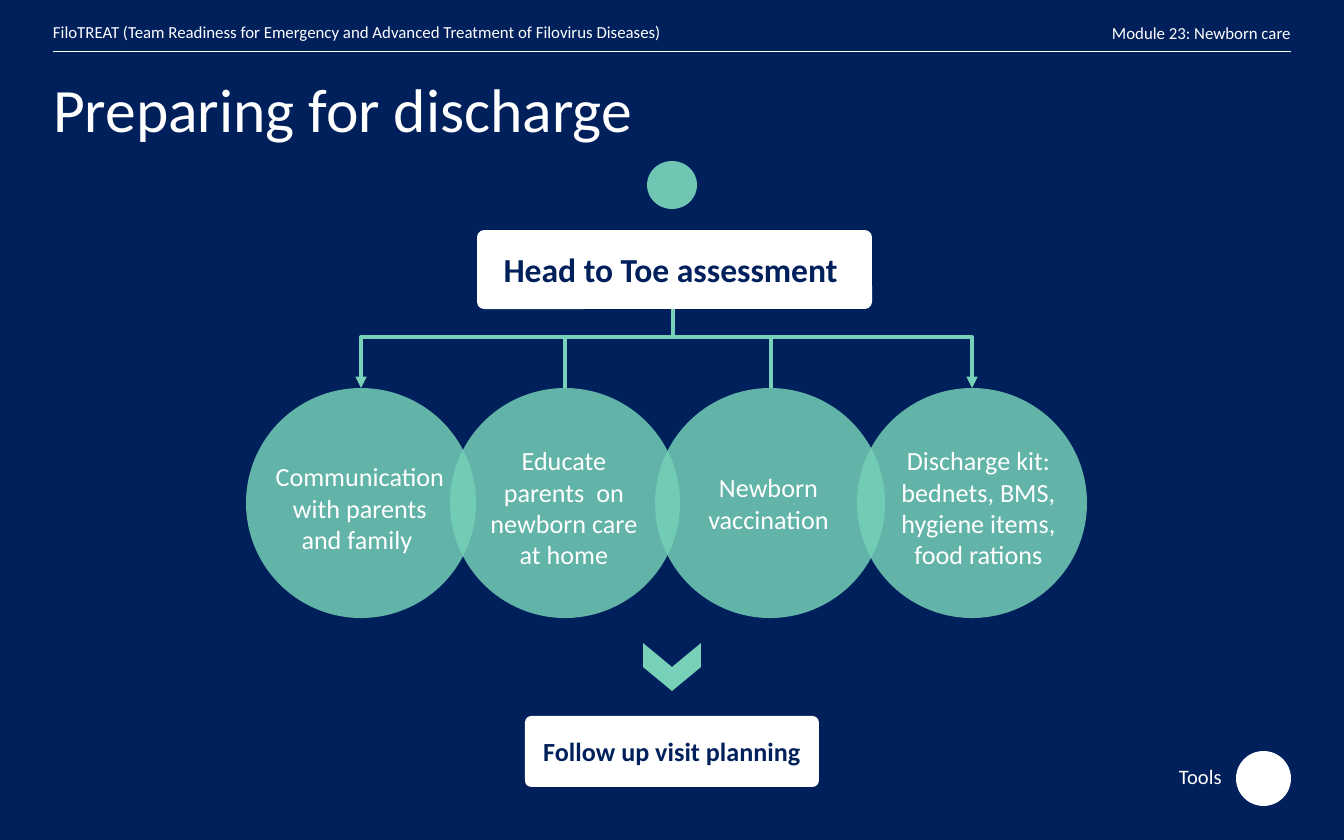
from dataclasses import dataclass

import pptx
import pptx.dml.color
import pptx.enum.shapes
import pptx.enum.text
import pptx.oxml.ns
import pptx.oxml.xmlchemy
import pptx.util

EMU_PER_PX = 914400 / 134.4
NAVY, WHITE, MINT = "00205C", "FFFFFF", "76D1B8"
FONT = "Calibri"
SHAPE = pptx.enum.shapes.MSO_SHAPE
CONNECTOR = pptx.enum.shapes.MSO_CONNECTOR
CENTER = pptx.enum.text.PP_ALIGN.CENTER
DIAMETER, CIRCLE_TOP, BRANCH_Y = 230, 388, 337


@dataclass
class Box:
    left: int
    top: int
    width: int
    height: int

    def emu(self) -> list:
        return [px(v) for v in (self.left, self.top, self.width, self.height)]


@dataclass
class Step:
    circle_left: int
    label: Box
    text: str


def px(value: float) -> int:
    return round(value * EMU_PER_PX)


def rgb(color: str) -> pptx.dml.color.RGBColor:
    return pptx.dml.color.RGBColor.from_string(color)


def sub(parent, tag: str, **attrs: str):
    child = pptx.oxml.xmlchemy.OxmlElement(tag)
    for name, value in attrs.items():
        child.set(name, value)
    parent.append(child)
    return child


def write(tf, text: str, size: int, color: str, bold: bool = False, align=None):
    tf.text = text
    p = tf.paragraphs[0]
    p.alignment = align
    font = p.runs[0].font
    font.name, font.size, font.bold = FONT, pptx.util.Pt(size), bold
    font.color.rgb = rgb(color)
    return p


def add_shape(s, kind, box: Box, color: str, alpha: int = 100):
    sp = s.shapes.add_shape(kind, *box.emu())
    sp.shadow.inherit = False
    sp.fill.solid()
    sp.fill.fore_color.rgb = rgb(color)
    sp.line.fill.background()
    if alpha < 100:
        clr = sp._element.spPr.find(".//" + pptx.oxml.ns.qn("a:srgbClr"))
        sub(clr, "a:alpha", val=str(alpha * 1000))
    return sp


def add_card(s, box: Box, text: str, size: int) -> None:
    sp = add_shape(s, SHAPE.ROUNDED_RECTANGLE, box, WHITE)
    sp.adjustments[0] = 0.09
    sp.text_frame.vertical_anchor = pptx.enum.text.MSO_ANCHOR.MIDDLE
    write(sp.text_frame, text, size, NAVY, True, CENTER)


def add_text(s, box: Box, text: str, size: int, top_inset: int = 0,
             wrap: bool = False, spacing: float = 1.0) -> None:
    tf = s.shapes.add_textbox(*box.emu()).text_frame
    tf.word_wrap = wrap
    tf.margin_left = tf.margin_right = tf.margin_bottom = 0
    tf.margin_top = px(top_inset)
    write(tf, text, size, WHITE).line_spacing = spacing


def add_step(s, step: Step) -> None:
    circle = Box(step.circle_left, CIRCLE_TOP, DIAMETER, DIAMETER)
    add_shape(s, SHAPE.OVAL, circle, MINT, 83)
    tf = s.shapes.add_textbox(*step.label.emu()).text_frame
    tf.word_wrap = True
    write(tf, step.text, 14, WHITE, align=CENTER)


def add_line(s, x1: float, y1: float, x2: float, y2: float, color: str,
             width: float, kind=CONNECTOR.STRAIGHT, arrow: bool = False):
    line = s.shapes.add_connector(kind, px(x1), px(y1), px(x2), px(y2))
    line.line.color.rgb = rgb(color)
    line.line.width = pptx.util.Pt(width)
    sp_pr = line._element.spPr
    if arrow:
        sub(sp_pr.find(pptx.oxml.ns.qn("a:ln")), "a:tailEnd", type="triangle")
    sub(sp_pr, "a:effectLst")
    return line


def add_branch(s, x1: int, y1: int, x2: int, y2: int) -> None:
    """Elbow arrow that runs down, across at BRANCH_Y, then down again."""
    mid_x, mid_y = (x1 + x2) / 2, (y1 + y2) / 2
    half_w, half_h = (y2 - y1) / 2, abs(x2 - x1) / 2
    side = 1 if x2 > x1 else -1
    line = add_line(s, mid_x + side * half_w, mid_y - half_h,
                    mid_x - side * half_w, mid_y + half_h,
                    MINT, 2, CONNECTOR.ELBOW, True)
    sp_pr = line._element.spPr
    degrees = 270 if side > 0 else 90
    sp_pr.find(pptx.oxml.ns.qn("a:xfrm")).set("rot", str(degrees * 60000))
    guides = sp_pr.find(".//" + pptx.oxml.ns.qn("a:avLst"))
    bend = round((BRANCH_Y - y1) / (y2 - y1) * 100000)
    sub(guides, "a:gd", name="adj1", fmla=f"val {bend}")


STEPS = [
    Step(450, Box(466, 438, 196, 140), "Educate parents  on newborn care at home"),
    Step(246, Box(262, 454, 196, 109), "Communication with parents and family "),
    Step(655, Box(680, 465, 177, 77), "Newborn vaccination"),
    Step(857, Box(883, 438, 191, 140),
         "Discharge kit: bednets, BMS, hygiene items, food rations"),
]


def main() -> None:
    prs = pptx.Presentation()
    prs.slide_width, prs.slide_height = px(1344), px(840)
    s = prs.slides.add_slide(prs.slide_layouts[6])
    s.background.fill.solid()
    s.background.fill.fore_color.rgb = rgb(NAVY)

    # Header, footer and title
    add_line(s, 53, 52, 1291, 52, WHITE, 0.5)
    add_shape(s, SHAPE.OVAL, Box(1236, 751, 55, 55), WHITE)
    add_text(s, Box(1179, 742, 62, 54), "Tools", 11, 27, spacing=0.9)
    add_text(s, Box(53, 22, 825, 20),
             "FiloTREAT (Team Readiness for Emergency and Advanced "
             "Treatment of Filovirus Diseases)", 9)
    add_text(s, Box(1112, 23, 179, 40), "Module 23: Newborn care", 9)
    add_text(s, Box(53, 52, 1238, 192), "Preparing for discharge", 33, 27,
             True, 0.9)

    # Assessment card and the four discharge steps
    add_card(s, Box(477, 230, 395, 79), "Head to Toe assessment ", 18)
    for step in STEPS:
        add_step(s, step)

    # Branches from the card to the steps
    add_branch(s, 673, 309, 361, CIRCLE_TOP)
    add_branch(s, 673, 325, 972, CIRCLE_TOP)
    for x in (565, 771):
        add_line(s, x, BRANCH_Y, x, CIRCLE_TOP, MINT, 2)

    # Follow-up and markers
    add_card(s, Box(525, 716, 294, 71), "Follow up visit planning", 14)
    add_shape(s, SHAPE.CHEVRON, Box(648, 638, 48, 58), MINT).rotation = 90
    add_shape(s, SHAPE.OVAL, Box(647, 161, 50, 48), MINT, 94)

    prs.save("out.pptx")


if __name__ == "__main__":
    main()
